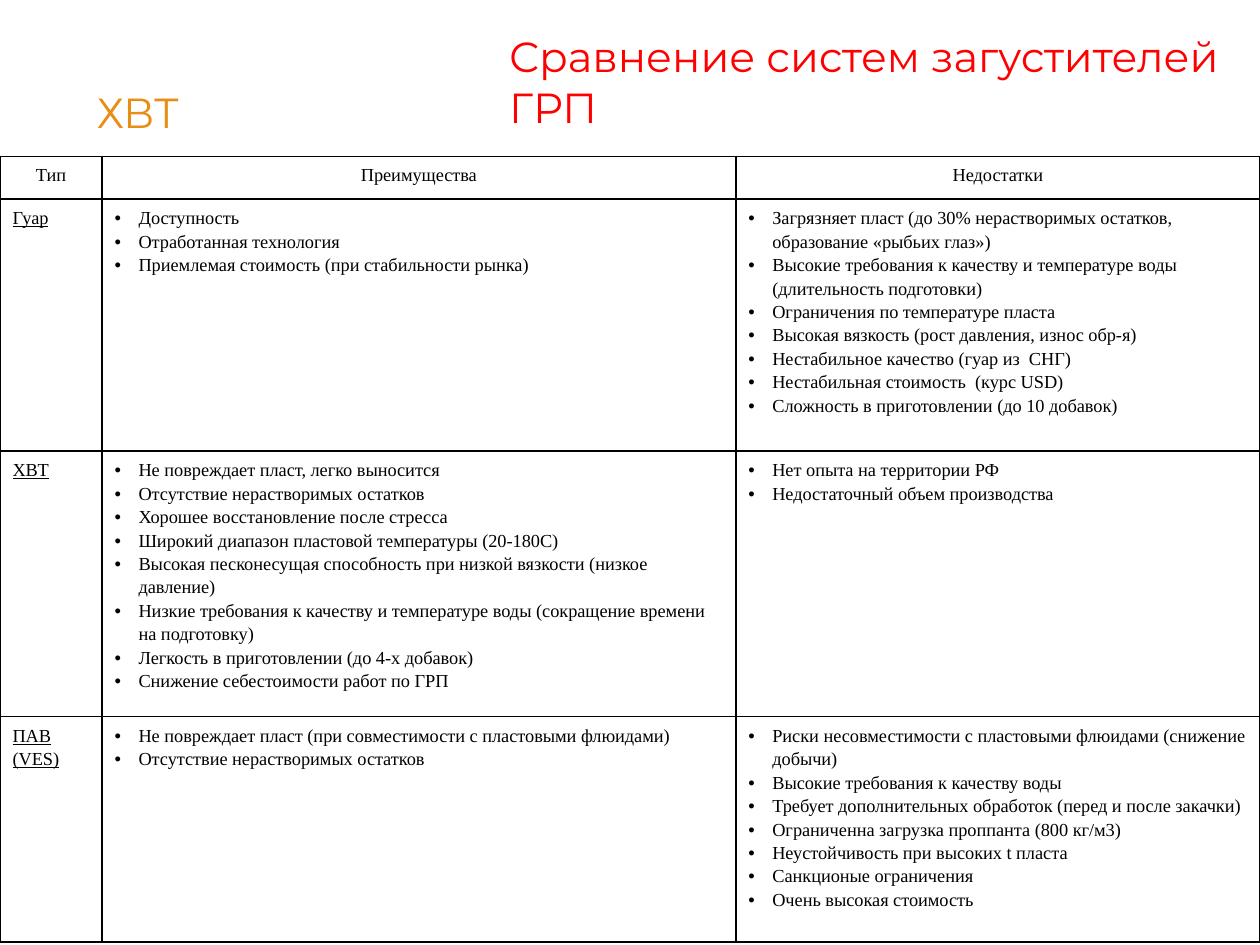
import pptx
import pptx.util
import pptx.dml.color
import pptx.enum.text
import pptx.oxml
import pptx.oxml.ns

Inches, Pt = pptx.util.Inches, pptx.util.Pt
RGB = pptx.dml.color.RGBColor
ALIGN, ANCHOR = pptx.enum.text.PP_ALIGN, pptx.enum.text.MSO_ANCHOR

BLACK, WHITE = RGB(0, 0, 0), RGB(255, 255, 255)
RED, ORANGE = RGB(0xFF, 0, 0), RGB(0xE9, 0x8E, 0x15)
NS = pptx.oxml.ns.nsdecls("a")

TITLE = "Сравнение систем загустителей ГРП"
LABEL = "ХВТ"
HEADS = ["Тип", "Преимущества", "Недостатки"]
TYPES = [
    ("Гуар",
     ["Доступность",
      "Отработанная технология",
      "Приемлемая стоимость (при стабильности рынка)"],
     ["Загрязняет пласт (до 30% нерастворимых остатков, образование «рыбьих глаз»)",
      "Высокие требования к качеству и температуре воды (длительность подготовки)",
      "Ограничения по температуре пласта",
      "Высокая вязкость (рост давления, износ обр-я)",
      "Нестабильное качество (гуар из  СНГ)",
      "Нестабильная стоимость  (курс USD)",
      "Сложность в приготовлении (до 10 добавок)"]),
    ("ХВТ",
     ["Не повреждает пласт, легко выносится",
      "Отсутствие нерастворимых остатков",
      "Хорошее восстановление после стресса",
      "Широкий диапазон пластовой температуры (20-180С)",
      "Высокая песконесущая способность при низкой вязкости (низкое давление)",
      "Низкие требования к качеству и температуре воды (сокращение времени на подготовку)",
      "Легкость в приготовлении (до 4-х добавок)",
      "Снижение себестоимости работ по ГРП"],
     ["Нет опыта на территории РФ",
      "Недостаточный объем производства"]),
    ("ПАВ (VES)",
     ["Не повреждает пласт (при совместимости с пластовыми флюидами)",
      "Отсутствие нерастворимых остатков"],
     ["Риски несовместимости с пластовыми флюидами (снижение добычи)",
      "Высокие требования к качеству воды",
      "Требует дополнительных обработок (перед и после закачки)",
      "Ограниченна загрузка проппанта (800 кг/м3)",
      "Неустойчивость при высоких t пласта",
      "Санкционые ограничения",
      "Очень высокая стоимость"]),
]
COLS = [0.81, 5.03, 4.16]
ROWS = [0.34, 2, 2, 1.79]


def write(frame, lines, size=10.5, face="Times New Roman", color=BLACK,
          align=ALIGN.LEFT, space=1.15, line=None, bullet=False):
    frame.word_wrap = True
    for i, words in enumerate(lines):
        para = frame.add_paragraph() if i else frame.paragraphs[0]
        para.alignment, para.line_spacing = align, space
        if bullet:
            props = para._p.get_or_add_pPr()
            props.set("marL", str(Inches(0.19)))
            props.set("indent", str(-Inches(0.19)))
            props.append(pptx.oxml.parse_xml(f'<a:buFont {NS} typeface="Arial"/>'))
            props.append(pptx.oxml.parse_xml(f'<a:buChar {NS} char="•"/>'))
        run = para.add_run()
        run.text = words
        font = run.font
        font.size, font.name, font.underline = Pt(size), face, line
        font.color.rgb = color


def style(cell):
    """Give a cell thin black borders and a white fill."""
    props = cell._tc.get_or_add_tcPr()
    for side in ("lnL", "lnR", "lnT", "lnB"):
        props.append(pptx.oxml.parse_xml(
            f'<a:{side} {NS} w="{Pt(1)}"><a:solidFill>'
            f'<a:srgbClr val="{BLACK}"/></a:solidFill></a:{side}>'))
    cell.fill.solid()
    cell.fill.fore_color.rgb = WHITE


def main():
    deck = pptx.Presentation()
    deck.slide_width, deck.slide_height = Inches(10), Inches(7.5)
    slide = deck.slides.add_slide(deck.slide_layouts[5])

    title = slide.shapes.title
    title.left, title.top = Inches(3.94), Inches(0.21)
    title.width, title.height = Inches(6.06), Inches(0.87)
    title.text_frame.auto_size = pptx.enum.text.MSO_AUTO_SIZE.NONE
    title.text_frame.vertical_anchor = ANCHOR.MIDDLE
    write(title.text_frame, [TITLE], size=24, face="Montserrat", color=RED, space=1.0)

    label = slide.shapes.add_textbox(Inches(0.67), Inches(0.65), Inches(3.26), Inches(0.87))
    label.text_frame.vertical_anchor = ANCHOR.TOP
    label.text_frame.margin_top = Inches(0.13)
    write(label.text_frame, [LABEL], size=24, face="Montserrat", color=ORANGE, space=Pt(22))

    table = slide.shapes.add_table(len(ROWS), len(COLS), Inches(0), Inches(1.24),
                                   Inches(sum(COLS)), Inches(sum(ROWS))).table
    table.first_row = table.horz_banding = False
    for col, width in zip(table.columns, COLS):
        col.width = Inches(width)
    for row, height in zip(table.rows, ROWS):
        row.height = Inches(height)
    for cell in table.iter_cells():
        style(cell)
    for c, head in enumerate(HEADS):
        write(table.cell(0, c).text_frame, [head], align=ALIGN.CENTER)
    for r, (kind, pros, cons) in enumerate(TYPES, 1):
        write(table.cell(r, 0).text_frame, [kind], line=True)
        write(table.cell(r, 1).text_frame, pros, bullet=True)
        write(table.cell(r, 2).text_frame, cons, bullet=True)

    deck.save("out.pptx")


if __name__ == "__main__":
    main()
